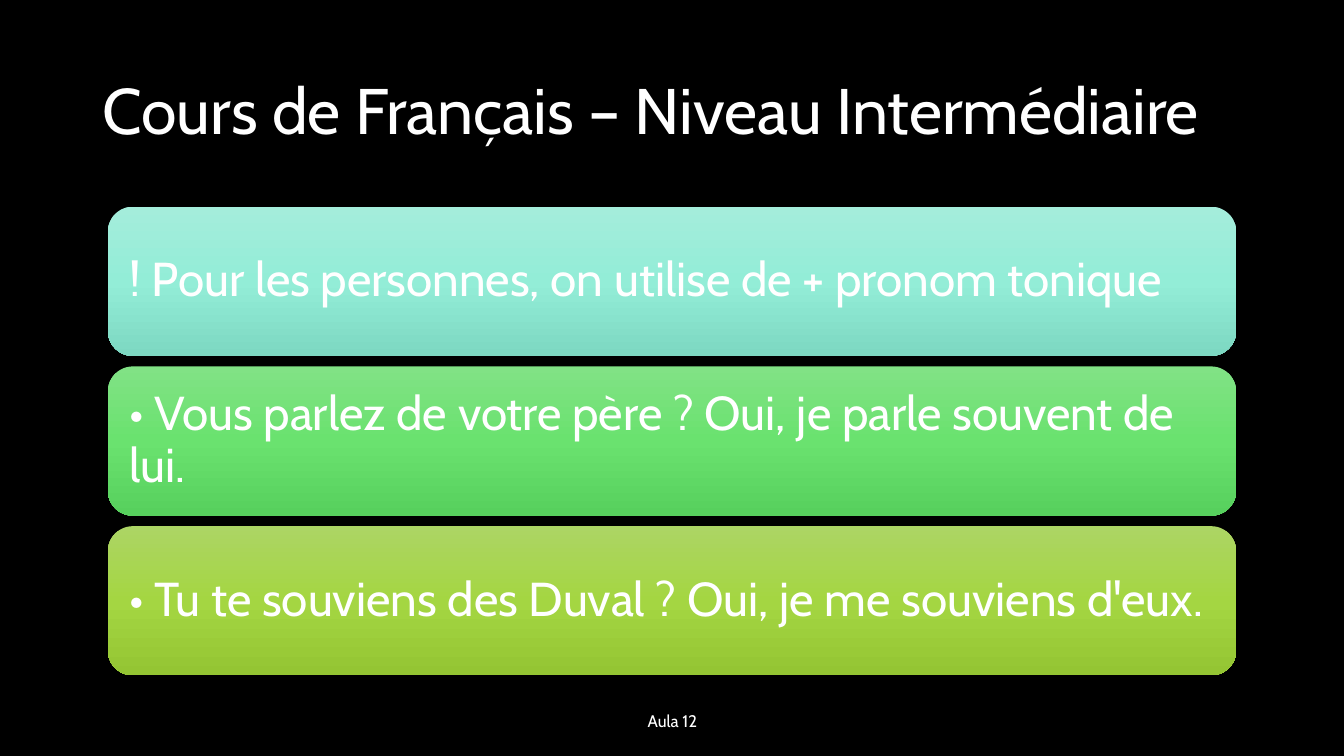
import copy

import pptx
import pptx.dml.color
import pptx.enum.shapes
import pptx.enum.text
import pptx.oxml.ns
import pptx.util

Inches = pptx.util.Inches
ALIGN = pptx.enum.text.PP_ALIGN

TITLE = "Cours de Français – Niveau Intermédiaire"
FOOTER = "Aula 12"
CARDS = [
    ("! Pour les personnes, on utilise de + pronom tonique", "aqua"),
    ("• Vous parlez de votre père ? Oui, je parle souvent de lui.", "green"),
    ("• Tu te souviens des Duval ? Oui, je me souviens d'eux.", "lime"),
]
COLORS = {"background": "000000", "text": "FFFFFF"}
GRADIENTS = {
    "aqua": ("A4EDDB", "93EDD7", "7DD8C2"),
    "green": ("81E285", "6AE26F", "57D05D"),
    "lime": ("ACD564", "A4D642", "94C533"),
}
FONT = "Cabin"
CARD_LEFT, CARD_TOP, CARD_WIDTH, CARD_HEIGHT = 1.07, 2.05, 11.19, 1.48
CARD_STEP = 1.585


def rgb(value):
    return pptx.dml.color.RGBColor.from_string(value)


def write_text(box, text, size, align=ALIGN.LEFT, spacing=0.9, side=0.1, edge=0.05):
    frame = box.text_frame
    frame.word_wrap = True
    frame.vertical_anchor = pptx.enum.text.MSO_ANCHOR.MIDDLE
    frame.margin_left = frame.margin_right = Inches(side)
    frame.margin_top = frame.margin_bottom = Inches(edge)
    para = frame.paragraphs[0]
    para.alignment = align
    para.line_spacing = spacing
    span = para.add_run()
    span.text = text
    span.font.name = FONT
    span.font.size = pptx.util.Pt(size)
    span.font.color.rgb = rgb(COLORS["text"])


def fill_gradient(shape, colors):
    shape.fill.gradient()
    shape.fill.gradient_angle = 270
    stop_list = shape._element.spPr.find(".//" + pptx.oxml.ns.qn("a:gsLst"))
    stop_list.append(copy.deepcopy(stop_list[-1]))
    for index, (stop, color) in enumerate(zip(shape.fill.gradient_stops, colors)):
        stop.position = index / 2
        stop.color.rgb = rgb(color)


def add_card(page, index, text, gradient):
    card = page.shapes.add_shape(
        pptx.enum.shapes.MSO_SHAPE.ROUNDED_RECTANGLE,
        Inches(CARD_LEFT), Inches(CARD_TOP + index * CARD_STEP),
        Inches(CARD_WIDTH), Inches(CARD_HEIGHT),
    )
    card.shadow.inherit = False
    card.line.fill.background()
    fill_gradient(card, GRADIENTS[gradient])
    write_text(card, text, 34, side=0.14, edge=0.14)


def main():
    deck = pptx.Presentation()
    deck.slide_width, deck.slide_height = Inches(13.33), Inches(7.5)
    page = deck.slides.add_slide(deck.slide_layouts[6])
    page.background.fill.solid()
    page.background.fill.fore_color.rgb = rgb(COLORS["background"])

    title = page.shapes.add_textbox(Inches(0.92), Inches(0.4), Inches(11.5), Inches(1.45))
    write_text(title, TITLE, 46)
    for index, (text, gradient) in enumerate(CARDS):
        add_card(page, index, text, gradient)
    footer = page.shapes.add_textbox(Inches(4.42), Inches(6.95), Inches(4.5), Inches(0.4))
    write_text(footer, FOOTER, 12, align=ALIGN.CENTER, spacing=1.0)

    deck.save("out.pptx")


if __name__ == "__main__":
    main()
